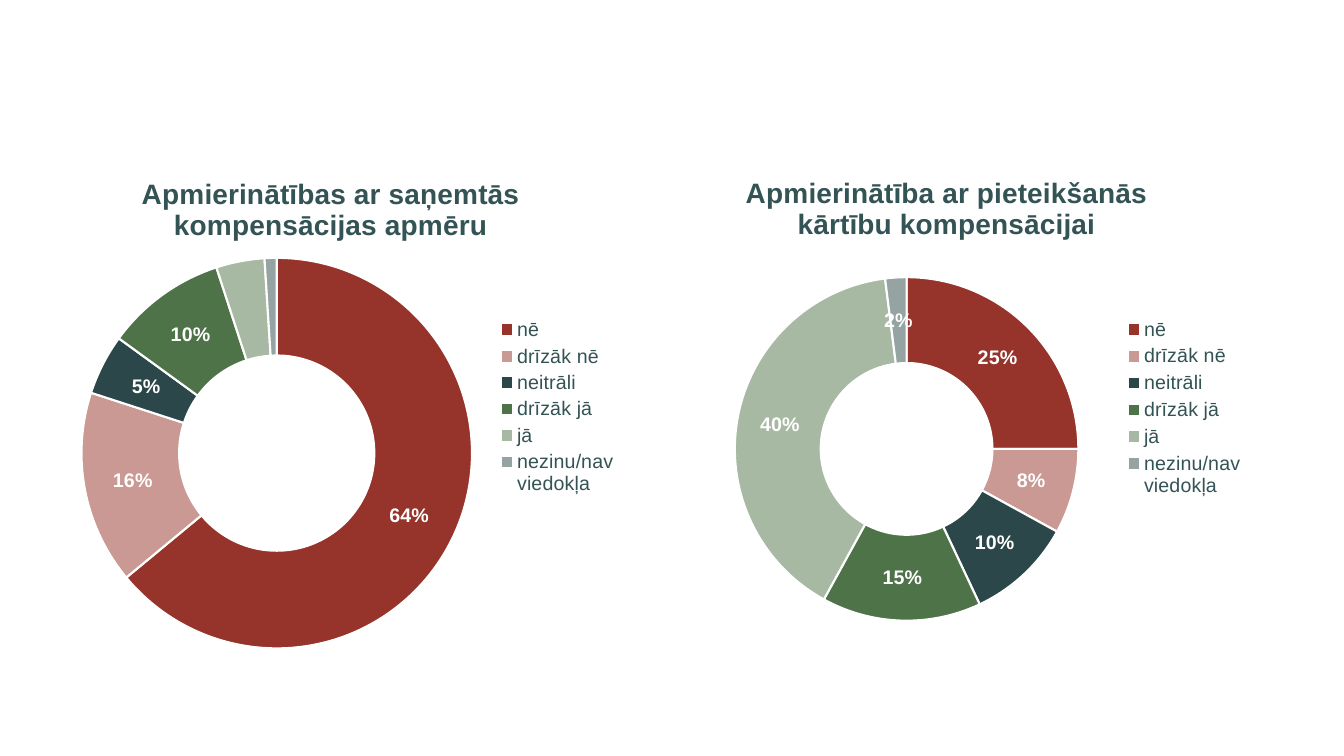
from lxml import etree
from pptx import Presentation
from pptx.chart.data import CategoryChartData
from pptx.dml.color import RGBColor
from pptx.enum.chart import XL_CHART_TYPE as ChartType, XL_LEGEND_POSITION as LegendPosition
from pptx.oxml.ns import qn
from pptx.util import Cm, Pt

COLORS = {
    "text": "335355",
    "white": "FFFFFF",
    "nē": "96332A",
    "drīzāk nē": "CA9993",
    "neitrāli": "2C4749",
    "drīzāk jā": "4F7348",
    "jā": "A7B9A3",
    "nezinu/nav viedokļa": "95A3A3",
}
ANSWERS = list(COLORS)[2:]


def rgb(name):
    """Return the named colour."""
    return RGBColor.from_string(COLORS[name])


def format_font(font, size, color="text", bold=False):
    """Set face, size, colour and weight of a font."""
    font.name, font.size, font.bold = "Arial", Pt(size), bold
    font.color.rgb = rgb(color)


def write_text(frame, text, **style):
    """Write formatted text into the first paragraph of a frame."""
    span = frame.paragraphs[0].add_run()
    span.text = text
    format_font(span.font, **style)


def place_part(part, index, target=None, **fractions):
    """Give a chart part a manual layout in fractions of the chart."""
    for old in part.findall(qn("c:layout")):
        part.remove(old)
    layout = etree.Element(qn("c:layout"))
    manual = etree.SubElement(layout, qn("c:manualLayout"))
    settings = {"layoutTarget": target} if target else {}
    settings.update(xMode="edge", yMode="edge", **fractions)
    for tag, value in settings.items():
        etree.SubElement(manual, qn(f"c:{tag}")).set("val", str(value))
    part.insert(index, layout)


def hide_labels(labels, hidden):
    """Remove the labels of the listed points."""
    for position, point in enumerate(hidden):
        label = etree.Element(qn("c:dLbl"))
        etree.SubElement(label, qn("c:idx")).set("val", str(point))
        etree.SubElement(label, qn("c:delete")).set("val", "1")
        labels.insert(position, label)


def add_doughnut(page, box, title, values, title_at, plot_at, legend_at, hidden=()):
    """Draw one satisfaction doughnut with title and legend in the box."""
    data = CategoryChartData()
    data.categories = ANSWERS
    data.add_series("Series 1", values)
    chart = page.shapes.add_chart(ChartType.DOUGHNUT, *map(Cm, box), data).chart
    format_font(chart.font, 10)

    chart.has_title = True
    write_text(chart.chart_title.text_frame, title, size=20, bold=True)
    chart.chart_title.include_in_layout = False
    chart.has_legend = True
    chart.legend.position = LegendPosition.RIGHT
    chart.legend.include_in_layout = False
    format_font(chart.legend.font, 14)

    chart.plots[0].vary_by_categories = True
    series = chart.plots[0].series[0]
    for index, answer in enumerate(ANSWERS):
        style = series.points[index].format
        style.fill.solid()
        style.fill.fore_color.rgb = rgb(answer)
        style.line.color.rgb = rgb("white")
        style.line.width = Pt(1.5)
    labels = series.data_labels
    labels.show_percentage = True
    labels.show_value = False
    labels.number_format = "0%"
    labels.number_format_is_linked = False
    format_font(labels.font, 14, "white", True)

    root = chart.element
    hide_labels(root.xpath(".//c:ser/c:dLbls")[0], hidden)
    place_part(root.xpath("c:chart/c:title")[0], 1, **title_at)
    place_part(root.xpath("c:chart/c:plotArea")[0], 0, "inner", **plot_at)
    place_part(root.xpath("c:chart/c:legend")[0], 1, **legend_at)


def main():
    """Build the slide with its two doughnut charts."""
    deck = Presentation()
    deck.slide_width, deck.slide_height = Cm(33.87), Cm(19.05)
    page = deck.slides.add_slide(deck.slide_layouts[6])
    add_doughnut(
        page, (1.42, 3.78, 14.43, 12.95),
        "Apmierinātības ar saņemtās kompensācijas apmēru",
        (64, 16, 5, 10, 4, 1),
        title_at=dict(x=0.14, y=0.04),
        plot_at=dict(x=0.04, y=0.21, w=0.69, h=0.76),
        legend_at=dict(x=0.77, y=0.32, w=0.21, h=0.36),
        hidden=(4, 5),
    )
    add_doughnut(
        page, (17.22, 3.3, 14.43, 13.94),
        "Apmierinātība ar pieteikšanās kārtību kompensācijai",
        (25, 8, 10, 15, 40, 2),
        title_at=dict(x=0.1, y=0.07),
        plot_at=dict(x=0.09, y=0.26, w=0.6, h=0.63),
        legend_at=dict(x=0.77, y=0.33, w=0.21, h=0.34),
    )
    deck.save("out.pptx")


if __name__ == "__main__":
    main()
